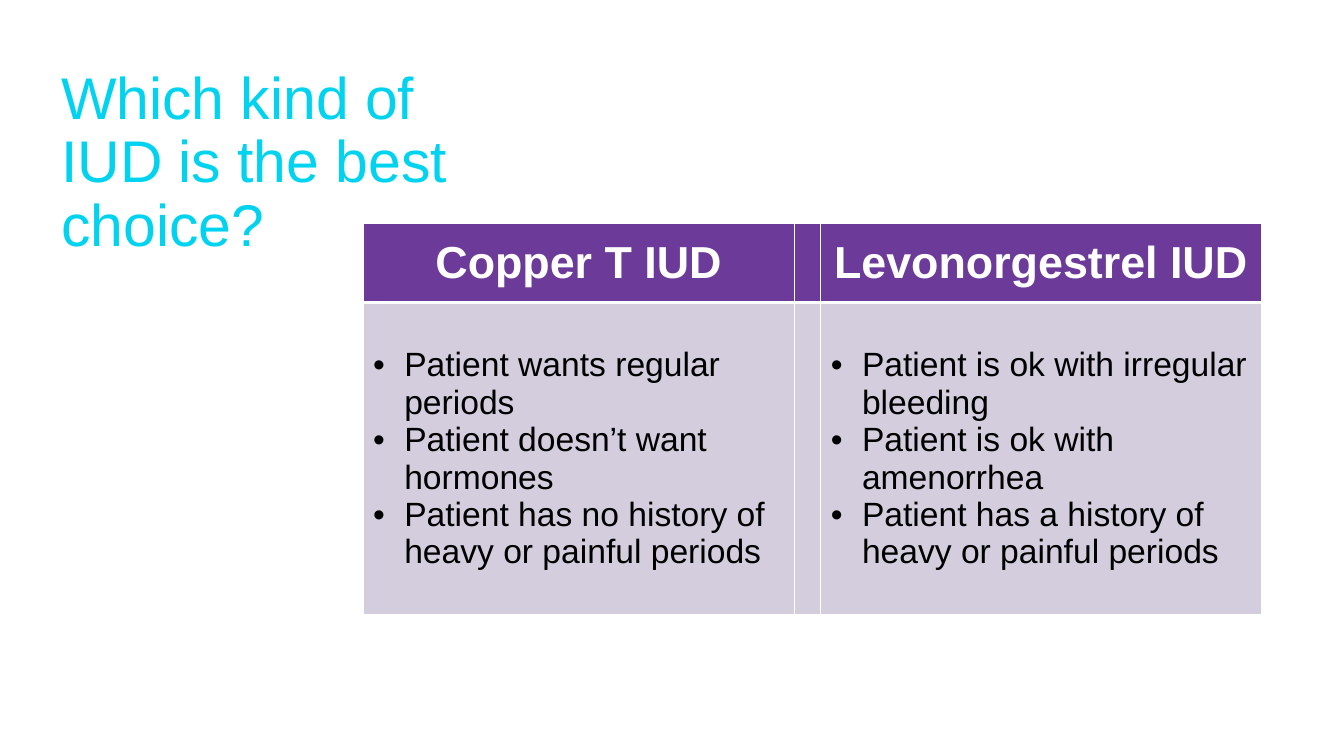
import pptx
import pptx.dml.color
import pptx.enum.text
import pptx.oxml
import pptx.oxml.ns
import pptx.util

EMU_PER_PX = 9144  # 100 px to the inch
FONT = "Arial"
PURPLE, LILAC, CYAN = "6C3A99", "D3CDDD", "00D3EF"
WHITE, BLACK = "FFFFFF", "000000"

HEADINGS = ["Copper T IUD", "", "Levonorgestrel IUD"]
REASONS = [
    ["Patient wants regular periods",
     "Patient doesn’t want hormones",
     "Patient has no history of heavy or painful periods"],
    [],
    ["Patient is ok with irregular bleeding",
     "Patient is ok with amenorrhea",
     "Patient has a history of heavy or painful periods"],
]


def px(length):
    return pptx.util.Emu(length * EMU_PER_PX)


def color(value):
    return pptx.dml.color.RGBColor.from_string(value)


def element(tag, **attributes):
    node = pptx.oxml.parse_xml(f"<a:{tag} {pptx.oxml.ns.nsdecls('a')}/>")
    for name, value in attributes.items():
        node.set(name, str(value))
    return node


class SlideBuilder:
    def __init__(self, slide, font):
        self.slide = slide
        self.font = font

    def style(self, paragraph, size, value, bold=False):
        paragraph.font.name = self.font
        paragraph.font.size = pptx.util.Pt(size)
        paragraph.font.bold = bold
        paragraph.font.color.rgb = color(value)

    def title(self, left, top, width, height, text):
        shape = self.slide.shapes.add_textbox(px(left), px(top), px(width), px(height))
        frame = shape.text_frame
        frame.word_wrap = True
        frame.auto_size = pptx.enum.text.MSO_AUTO_SIZE.SHAPE_TO_FIT_TEXT
        paragraph = frame.paragraphs[0]
        paragraph.text = text
        paragraph.line_spacing = 0.9
        self.style(paragraph, 42, CYAN)

    def bullet(self, paragraph, indent):
        properties = paragraph._p.get_or_add_pPr()
        properties.set("marL", str(px(indent)))
        properties.set("indent", str(px(-indent)))
        bullet_color = element("buClr")
        bullet_color.append(element("srgbClr", val=BLACK))
        properties.append(bullet_color)
        properties.append(element("buFont", typeface=self.font))
        properties.append(element("buChar", char="•"))

    def borders(self, cell, **widths):
        """Draw white cell edges; widths are points keyed by L, R, T and B."""
        properties = cell._tc.get_or_add_tcPr()
        for position, (side, width) in enumerate(widths.items()):
            line = element(f"ln{side}", w=pptx.util.Pt(width))
            fill = element("solidFill")
            fill.append(element("srgbClr", val=WHITE))
            line.append(fill)
            properties.insert(position, line)

    def cell(self, cell, lines, fill, heading):
        cell.fill.solid()
        cell.fill.fore_color.rgb = color(fill)
        cell.vertical_anchor = pptx.enum.text.MSO_ANCHOR.MIDDLE
        for position, text in enumerate(lines):
            frame = cell.text_frame
            paragraph = frame.add_paragraph() if position else frame.paragraphs[0]
            paragraph.text = text
            if heading:
                paragraph.alignment = pptx.enum.text.PP_ALIGN.CENTER
                self.style(paragraph, 32, WHITE, bold=True)
            else:
                self.bullet(paragraph, 31)
                self.style(paragraph, 24, BLACK)

    def table(self, left, top, widths, heights, headings, bodies):
        frame = self.slide.shapes.add_table(
            len(heights), len(widths), px(left), px(top), px(sum(widths)), px(sum(heights)))
        table = frame.table
        for column, width in zip(table.columns, widths):
            column.width = px(width)
        for row, height in zip(table.rows, heights):
            row.height = px(height)
        for column, (heading, body) in enumerate(zip(headings, bodies)):
            top_cell, body_cell = table.cell(0, column), table.cell(1, column)
            self.cell(top_cell, [heading] if heading else [], PURPLE, True)
            self.cell(body_cell, body, LILAC, False)
            self.borders(top_cell, L=1, R=1, T=1, B=3)
            self.borders(body_cell, L=1, R=1, T=3, B=1)


def main():
    presentation = pptx.Presentation()
    presentation.slide_width, presentation.slide_height = px(1333), px(750)
    slide = presentation.slides.add_slide(presentation.slide_layouts[6])
    builder = SlideBuilder(slide, FONT)
    builder.title(51, 63, 407, 201, "Which kind of IUD is the best choice?")
    builder.table(360, 222, [428, 26, 437], [78, 310], HEADINGS, REASONS)
    presentation.save("out.pptx")


if __name__ == "__main__":
    main()
